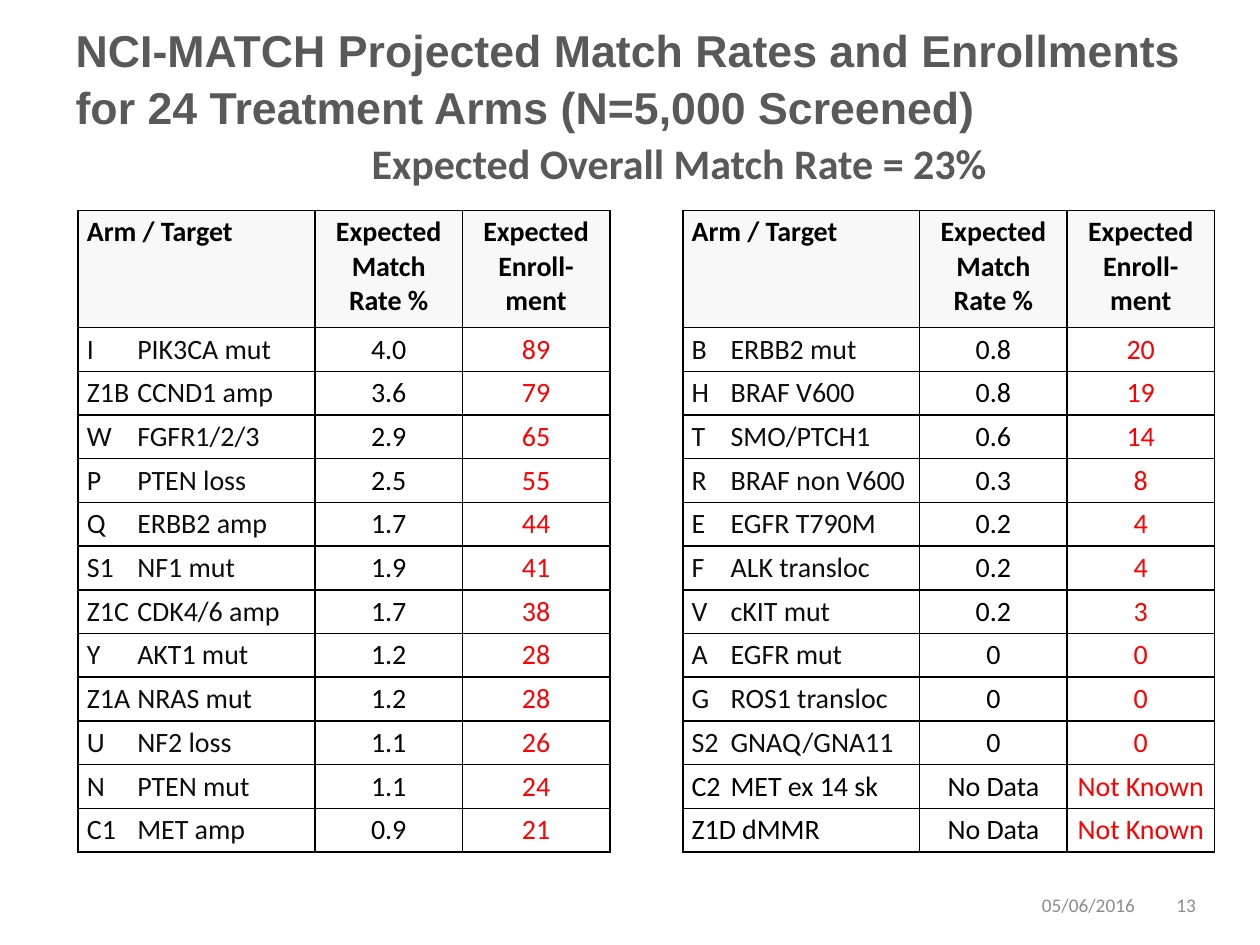
from lxml import etree
from pptx import Presentation
from pptx.dml.color import RGBColor
from pptx.enum.text import MSO_ANCHOR, MSO_AUTO_SIZE, PP_ALIGN
from pptx.oxml.ns import qn
from pptx.util import Inches, Pt

LEFT, CENTER, RIGHT = PP_ALIGN.LEFT, PP_ALIGN.CENTER, PP_ALIGN.RIGHT
TOP, MIDDLE = MSO_ANCHOR.TOP, MSO_ANCHOR.MIDDLE

# Content
TITLE = ("NCI-MATCH Projected Match Rates and Enrollments "
         "for 24 Treatment Arms (N=5,000 Screened)")
SUBTITLE = "Expected Overall Match Rate = 23%"
LEFT_ARMS = [
    ("Arm / Target", "Expected Match\nRate %", "Expected Enroll-ment"),
    ("I\tPIK3CA mut", "4.0", "89"),
    ("Z1B\tCCND1 amp", "3.6", "79"),
    ("W\tFGFR1/2/3", "2.9", "65"),
    ("P\tPTEN loss", "2.5", "55"),
    ("Q\tERBB2 amp", "1.7", "44"),
    ("S1\tNF1 mut", "1.9", "41"),
    ("Z1C\tCDK4/6 amp", "1.7", "38"),
    ("Y\tAKT1 mut", "1.2", "28"),
    ("Z1A\tNRAS mut", "1.2", "28"),
    ("U\tNF2 loss", "1.1", "26"),
    ("N\tPTEN mut", "1.1", "24"),
    ("C1\tMET amp", "0.9", "21"),
]
RIGHT_ARMS = [
    ("Arm / Target", "Expected Match Rate %", "Expected Enroll-ment"),
    ("B\tERBB2 mut", "0.8", "20"),
    ("H\tBRAF V600", "0.8", "19"),
    ("T\tSMO/PTCH1", "0.6", "14"),
    ("R\tBRAF non V600", "0.3", "8"),
    ("E\tEGFR T790M", "0.2", "4"),
    ("F\tALK transloc", "0.2", "4"),
    ("V\tcKIT mut", "0.2", "3"),
    ("A\tEGFR mut", "0", "0"),
    ("G\tROS1 transloc", "0", "0"),
    ("S2\tGNAQ/GNA11", "0", "0"),
    ("C2\tMET ex 14 sk", "No Data", "Not Known"),
    ("Z1D dMMR", "No Data", "Not Known"),
]
GROUPS = [(0, LEFT_ARMS, 0.4), (4, RIGHT_ARMS, 0.31)]  # first column, rows, tab
GAP_COL = 3
COL_WIDTHS = [1.88, 1.17, 1.17, 0.58, 1.88, 1.17, 1.17]
HEADER_H, ROW_H = 0.93, 0.3

# Text boxes: text, position, alignment, anchor, format
FOOTER = dict(size=11, color="8C8C8C")
BOXES = [
    (SUBTITLE, (2.39, 1.04, 6, 0.5), CENTER, TOP,
     dict(size=24, color="595959", bold=True)),
    ("13", (9.19, 6.98, 0.4, 0.4), RIGHT, MIDDLE, FOOTER),
    ("05/06/2016", (8.17, 6.98, 1.1, 0.4), LEFT, MIDDLE, FOOTER),
]


def rgb(color):
    return RGBColor.from_string(color)


def write(tf, text, align=LEFT, tab=None, color="000000", size=16,
          name="Calibri", bold=False):
    values = dict(size=Pt(size), name=name, bold=bold)
    for i, line in enumerate(text.split("\n")):
        p = tf.add_paragraph() if i else tf.paragraphs[0]
        p.alignment = align
        if tab and "\t" in line:
            tabs = etree.SubElement(p._p.get_or_add_pPr(), qn("a:tabLst"))
            etree.SubElement(tabs, qn("a:tab"), pos=str(Inches(tab)), algn="l")
        r = p.add_run()
        r.text = line
        for key, value in values.items():
            setattr(r.font, key, value)
        r.font.color.rgb = rgb(color)


def set_borders(cell, sides):
    tcPr = cell._tc.get_or_add_tcPr()
    for side in "LRTB":
        ln = etree.SubElement(tcPr, qn(f"a:ln{side}"), w=str(Pt(1)))
        if side in sides:
            fill = etree.SubElement(ln, qn("a:solidFill"))
            etree.SubElement(fill, qn("a:srgbClr"), val="000000")
        else:
            etree.SubElement(ln, qn("a:noFill"))


def format_cell(cell, sides, fill=None):
    set_borders(cell, sides)
    margins = dict(margin_left=Inches(0.07), margin_right=Inches(0.07),
                   margin_top=Pt(2.7), margin_bottom=Pt(2.7))
    for key, value in margins.items():
        setattr(cell, key, value)
    if fill:
        cell.fill.solid()
        cell.fill.fore_color.rgb = rgb(fill)
    else:
        cell.fill.background()


prs = Presentation()
prs.slide_width, prs.slide_height = Inches(10), Inches(7.5)
s = prs.slides.add_slide(prs.slide_layouts[5])

# Title
title = s.shapes.title
title.left, title.top, title.width, title.height = map(Inches, (0.5, 0.3, 9, 0.62))
tf = title.text_frame
tf.auto_size = MSO_AUTO_SIZE.NONE
tf.vertical_anchor = MIDDLE
write(tf, TITLE, size=25.5, name="Arial", color="595959", bold=True)
tf.paragraphs[0].line_spacing = 1.05

# Table with two groups of arms and an open column between them
n_rows = len(LEFT_ARMS)
table = s.shapes.add_table(
    n_rows, len(COL_WIDTHS), Inches(0.62), Inches(1.67),
    Inches(sum(COL_WIDTHS)), Inches(HEADER_H + ROW_H * (n_rows - 1))).table
table.first_row = table.horz_banding = False
for col, width in zip(table.columns, COL_WIDTHS):
    col.width = Inches(width)
for i, row in enumerate(table.rows):
    row.height = Inches(ROW_H if i else HEADER_H)
    gap = table.cell(i, GAP_COL)
    format_cell(gap, "LR")
    gap.text_frame.paragraphs[0].font.size = Pt(16)

for first, arms, tab in GROUPS:
    for i, values in enumerate(arms):
        arm_color = "000000" if i == 0 or values[1] == "No Data" else "0D0D0D"
        colors = (arm_color, "000000", "FF0000" if i else "000000")
        for j, (text, color) in enumerate(zip(values, colors)):
            cell = table.cell(i, first + j)
            format_cell(cell, "LRTB", None if i else "F8F8F8")
            write(cell.text_frame, text, CENTER if j else LEFT, tab, color,
                  bold=i == 0)

# Subtitle, page number and date
for text, place, align, anchor, style in BOXES:
    tf = s.shapes.add_textbox(*map(Inches, place)).text_frame
    tf.word_wrap = True
    tf.vertical_anchor = anchor
    write(tf, text, align, **style)

prs.save("out.pptx")
